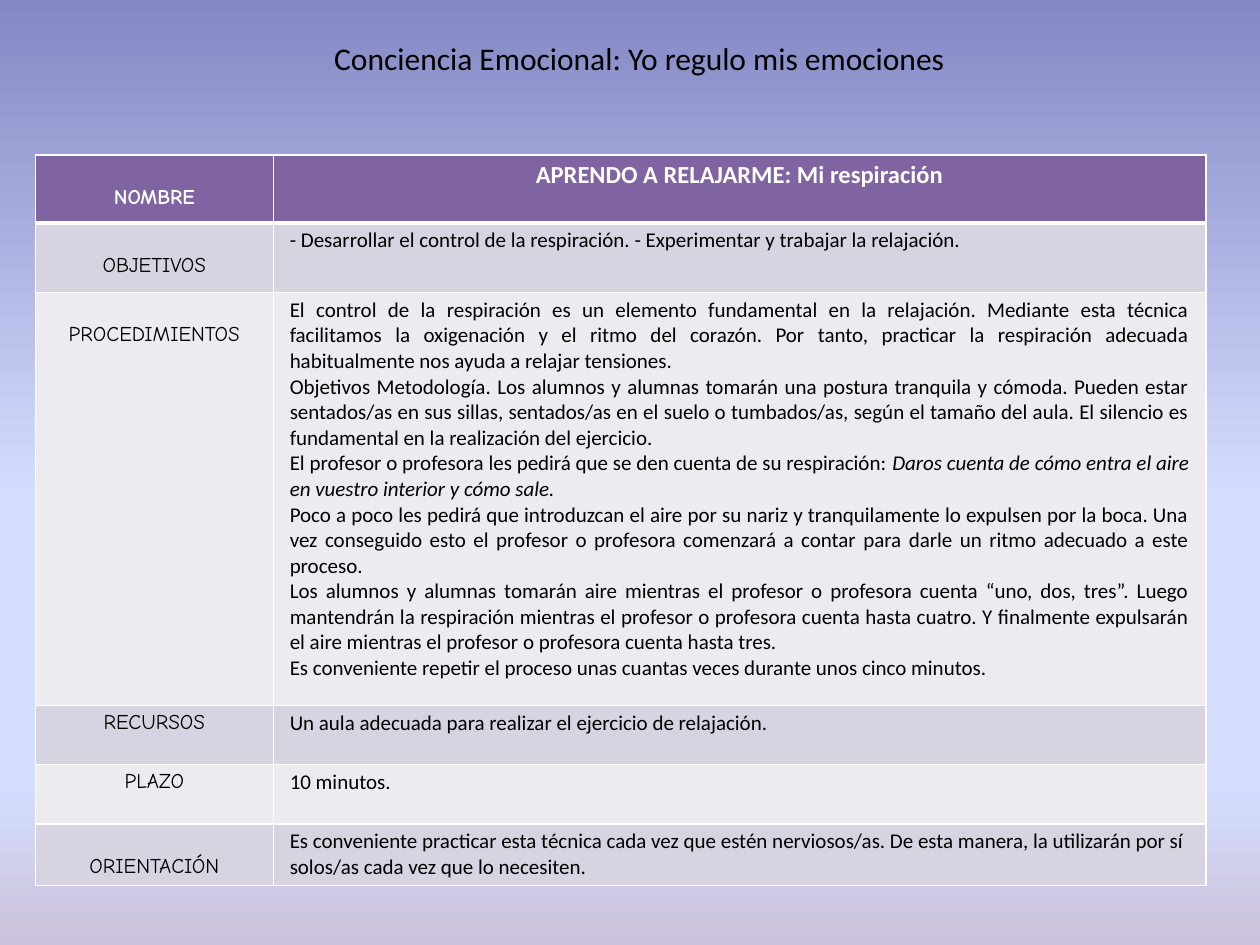
import dataclasses

import lxml.etree
import pptx
import pptx.dml.color
import pptx.enum.text
import pptx.oxml
import pptx.oxml.ns
import pptx.util

Inches = pptx.util.Inches
Pt = pptx.util.Pt
Align = pptx.enum.text.PP_ALIGN
qn = pptx.oxml.ns.qn

COLORS = {
    "head": "8064A2",
    "dark": "D8D3E0",
    "light": "EDEAF0",
    "line": "FFFFFF",
    "white": "FFFFFF",
    "black": "000000",
}
STOPS = [(0, "8488C4"), (53, "D4DEFF"), (83, "D4DEFF"), (100, "CCC1DA")]
BODY = "Calibri"
LABEL = "Comic Neue"
DROP = 0.2  # one line of extra space above a lowered label


@dataclasses.dataclass
class Row:
    label: str
    texts: list[str]
    height: float
    low: bool = False
    align: Align = Align.JUSTIFY
    size: int = 12


# A bar in a text separates the plain part from the italic part.
ROWS = [
    Row("NOMBRE", ["APRENDO A RELAJARME: Mi respiración"], 0.54, True, Align.CENTER, 14),
    Row(
        "OBJETIVOS",
        ["- Desarrollar el control de la respiración. - Experimentar y trabajar la relajación."],
        0.55,
        True,
    ),
    Row(
        "PROCEDIMIENTOS",
        [
            "El control de la respiración es un elemento fundamental en la relajación. "
            "Mediante esta técnica facilitamos la oxigenación y el ritmo del corazón. "
            "Por tanto, practicar la respiración adecuada habitualmente nos ayuda a "
            "relajar tensiones.",
            "Objetivos Metodología. Los alumnos y alumnas tomarán una postura tranquila y "
            "cómoda. Pueden estar sentados/as en sus sillas, sentados/as en el suelo o "
            "tumbados/as, según el tamaño del aula. El silencio es fundamental en la "
            "realización del ejercicio.",
            "El profesor o profesora les pedirá que se den cuenta de su respiración: "
            "|Daros cuenta de cómo entra el aire en vuestro interior y cómo sale.",
            "Poco a poco les pedirá que introduzcan el aire por su nariz y tranquilamente "
            "lo expulsen por la boca. Una vez conseguido esto el profesor o profesora "
            "comenzará a contar para darle un ritmo adecuado a este proceso.",
            "Los alumnos y alumnas tomarán aire mientras el profesor o profesora cuenta "
            "“uno, dos, tres”. Luego mantendrán la respiración mientras el profesor o "
            "profesora cuenta hasta cuatro. Y finalmente expulsarán el aire mientras el "
            "profesor o profesora cuenta hasta tres.",
            "Es conveniente repetir el proceso unas cuantas veces durante unos cinco minutos.",
        ],
        3.28,
        True,
    ),
    Row("RECURSOS", ["Un aula adecuada para realizar el ejercicio de relajación."], 0.47),
    Row("PLAZO", ["10 minutos."], 0.47),
    Row(
        "ORIENTACIÓN",
        [
            "Es conveniente practicar esta técnica cada vez que estén nerviosos/as. "
            "De esta manera, la utilizarán por sí solos/as cada vez que lo necesiten."
        ],
        0.49,
        True,
        Align.LEFT,
    ),
]


def rgb(name: str) -> pptx.dml.color.RGBColor:
    return pptx.dml.color.RGBColor.from_string(COLORS[name])


def style(run, face: str, size: int, color: str, bold: bool = False) -> None:
    run.font.name = face
    run.font.size = Pt(size)
    run.font.bold = bold
    run.font.color.rgb = rgb(color)


def paint_back(slide) -> None:
    fill = slide.background.fill
    fill.gradient()
    fill.gradient_angle = 270
    stops = next(slide.background._cSld.iter(qn("a:gsLst")))
    for stop in list(stops):
        stops.remove(stop)
    for place, color in STOPS:
        stop = lxml.etree.SubElement(stops, qn("a:gs"), pos=str(place * 1000))
        lxml.etree.SubElement(stop, qn("a:srgbClr"), val=color)


def edge(cell, top: int, bottom: int) -> None:
    """Draw the four borders of a cell, with top and bottom widths in points."""
    props = cell._tc.get_or_add_tcPr()
    widths = {"L": 1, "R": 1, "T": top, "B": bottom}
    for place, (side, width) in enumerate(widths.items()):
        line = props.makeelement(qn(f"a:ln{side}"), {"w": str(Pt(width))})
        fill = lxml.etree.SubElement(line, qn("a:solidFill"))
        lxml.etree.SubElement(fill, qn("a:srgbClr"), val=COLORS["line"])
        props.insert(place, line)


def write(cell, texts: list[str], align: Align, face: str, size: int, head: bool) -> None:
    frame = cell.text_frame
    for place, text in enumerate(texts):
        para = frame.add_paragraph() if place else frame.paragraphs[0]
        para.alignment = align
        for part, words in enumerate(text.split("|")):
            run = para.add_run()
            run.text = words
            run.font.italic = part == 1
            style(run, face, size, "white" if head else "black", head)


def add_grid(slide, rows: list[Row]) -> None:
    total = sum(row.height for row in rows)
    table = slide.shapes.add_table(
        len(rows), 2, Inches(0.28), Inches(1.23), Inches(9.29), Inches(total)
    ).table
    for column, width in zip(table.columns, (1.89, 7.4)):
        column.width = Inches(width)
    for place, row in enumerate(rows):
        table.rows[place].height = Inches(row.height)
        head = place == 0
        tint = "head" if head else ("dark" if place % 2 else "light")
        label, body = table.rows[place].cells
        for cell in (label, body):
            cell.margin_left = cell.margin_right = Inches(0.13)
            cell.margin_top = cell.margin_bottom = Inches(0.04)
            cell.fill.solid()
            cell.fill.fore_color.rgb = rgb(tint)
            edge(cell, 3 if place == 1 else 1, 3 if head else 1)
        if row.low:
            label.margin_top = Inches(0.04 + DROP)
        write(label, [row.label], Align.CENTER, LABEL, 12, head)
        write(body, row.texts, row.align, BODY, row.size, head)


def add_title(slide, text: str) -> None:
    title = slide.shapes.title
    title.left, title.top = Inches(2.32), Inches(0.26)
    title.width, title.height = Inches(5.51), Inches(0.4)
    frame = title.text_frame
    frame.text = text
    frame.word_wrap = True
    frame.vertical_anchor = pptx.enum.text.MSO_ANCHOR.TOP
    para = frame.paragraphs[0]
    para.alignment = Align.CENTER
    style(para.runs[0], BODY, 18, "black")


def main() -> None:
    deck = pptx.Presentation()
    deck.slide_width, deck.slide_height = Inches(10), Inches(7.5)
    slide = deck.slides.add_slide(deck.slide_layouts[5])
    paint_back(slide)
    add_title(slide, "Conciencia Emocional: Yo regulo mis emociones")
    add_grid(slide, ROWS)
    deck.save("out.pptx")


if __name__ == "__main__":
    main()
